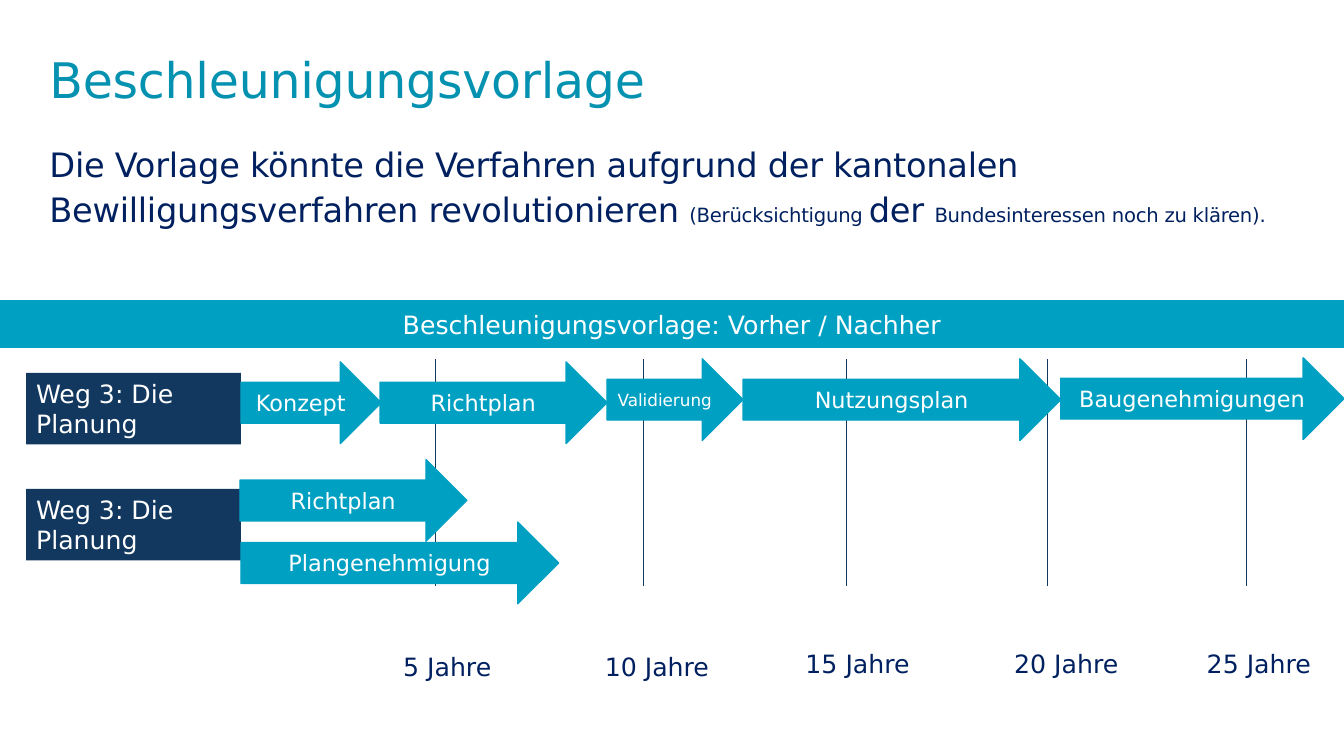
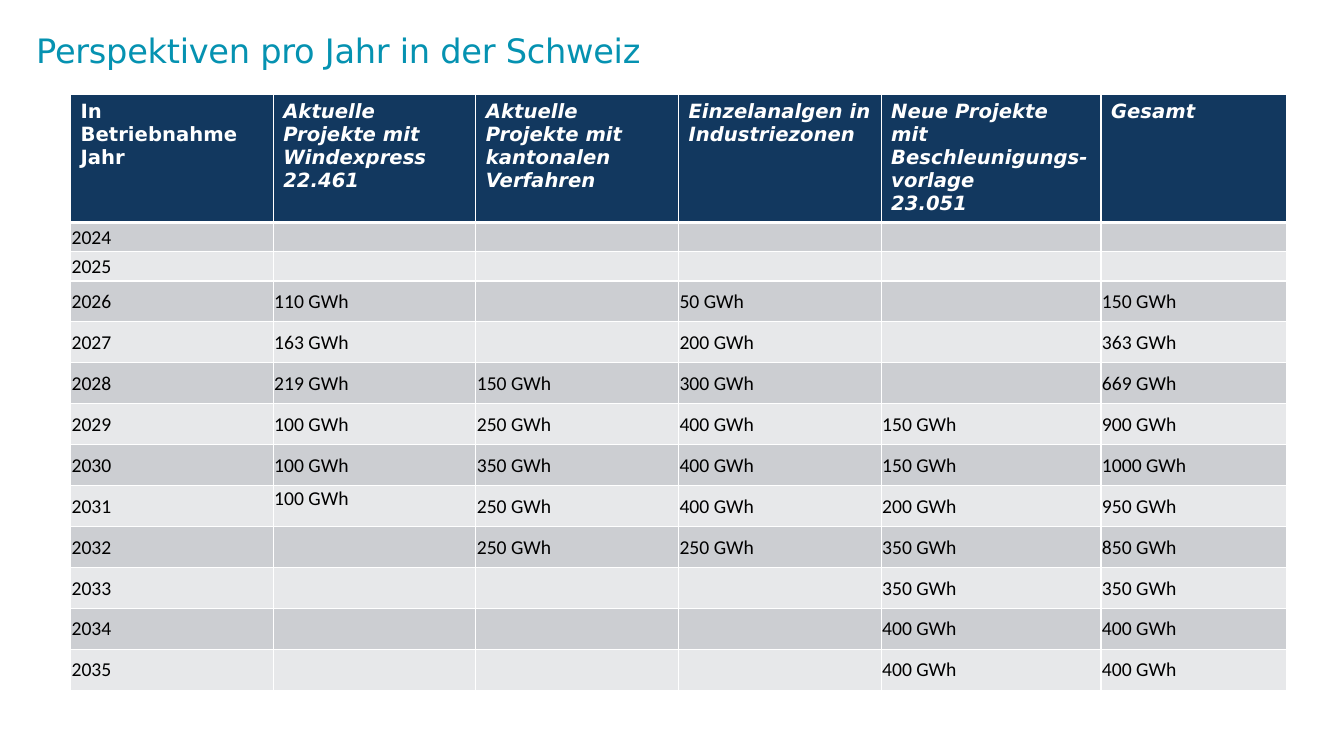
"""Build two slides on faster permits: a timeline and a yearly outlook table."""
from lxml import etree
from pptx import Presentation
from pptx.dml.color import RGBColor
from pptx.enum.shapes import MSO_CONNECTOR, MSO_SHAPE
from pptx.enum.text import MSO_ANCHOR, PP_ALIGN
from pptx.oxml.ns import qn
from pptx.util import Inches, Pt

RECT, ARROW = MSO_SHAPE.RECTANGLE, MSO_SHAPE.RIGHT_ARROW
LINE = MSO_CONNECTOR.STRAIGHT
TOP, MIDDLE = MSO_ANCHOR.TOP, MSO_ANCHOR.MIDDLE
LEFT, CENTER = PP_ALIGN.LEFT, PP_ALIGN.CENTER

COLORS = {"title": "0592B1", "text": "002060", "teal": "00A0C3", "navy": "12385F",
          "white": "FFFFFF", "black": "000000", "dark": "CCCED2", "light": "E7E8EA"}
SANS, BODY = "DejaVu Sans", "Calibri"

LEAD = [("Die Vorlage könnte die Verfahren aufgrund der kantonalen "
         "Bewilligungsverfahren revolutionieren ", 24),
        ("(Berücksichtigung ", 14), ("der ", 24),
        ("Bundesinteressen noch zu klären).", 14)]
BAND = "Beschleunigungsvorlage: Vorher / Nachher"
PATHS = [("Weg 3: Die Planung", 3.7), ("Weg 3: Die Planung", 4.85)]
YEARS = [("5 Jahre", 3.9, 6.41, 1.21), ("10 Jahre", 5.9, 6.41, 1.48),
         ("15 Jahre", 7.89, 6.38, 1.48), ("20 Jahre", 9.96, 6.38, 1.48),
         ("25 Jahre", 11.87, 6.38, 1.31)]
MARKS = [4.32, 6.38, 8.39, 10.39, 12.36]
STEPS = [("Konzept", 2.39, 3.59, 1.39, 16), ("Richtplan", 3.77, 3.59, 2.25, 16),
         ("Validierung", 6.02, 3.56, 1.35, 12), ("Nutzungsplan", 7.37, 3.56, 3.15, 16),
         ("Baugenehmigungen", 10.52, 3.55, 2.81, 16),
         ("Richtplan", 2.38, 4.56, 2.25, 16), ("Plangenehmigung", 2.39, 5.18, 3.15, 16)]

HEADS = ["In Betriebnahme Jahr", "Aktuelle Projekte mit Windexpress 22.461",
         "Aktuelle Projekte mit kantonalen Verfahren", "Einzelanalgen in Industriezonen",
         "Neue Projekte mit Beschleunigungs-vorlage\n23.051", "Gesamt"]
POWER = [(2024, None, None, None, None, None), (2025, None, None, None, None, None),
         (2026, 110, None, 50, None, 150), (2027, 163, None, 200, None, 363),
         (2028, 219, 150, 300, None, 669), (2029, 100, 250, 400, 150, 900),
         (2030, 100, 350, 400, 150, 1000), (2031, 100, 250, 400, 200, 950),
         (2032, None, 250, 250, 350, 850), (2033, None, None, None, 350, 350),
         (2034, None, None, None, 400, 400), (2035, None, None, None, 400, 400)]
WIDTHS = [2.01] * 4 + [2.18, 1.84]
HEIGHTS = [1.24] + [0.29] * 2 + [4.06 / 10] * 10
RAISED = (2031, 1)


def rgb(name):
    return RGBColor.from_string(COLORS[name])


def add_run(para, text, size, color, font=SANS, bold=False, slant=False, tight=False):
    run = para.add_run()
    run.text = text
    face = run.font
    face.name, face.size, face.bold, face.italic = font, Pt(size), bold, slant
    face.color.rgb = rgb(color)
    if tight:
        run._r.get_or_add_rPr().set("spc", "-20")


def add_text(slide, box, runs, color="text", flush=False, space=None):
    frame = slide.shapes.add_textbox(*map(Inches, box)).text_frame
    frame.word_wrap = True
    if flush:
        frame.margin_left = frame.margin_top = frame.margin_right = frame.margin_bottom = 0
    para = frame.paragraphs[0]
    if space:
        para.line_spacing = space
    for text, size in runs:
        add_run(para, text, size, color, tight=flush)


def add_title(slide, text, left, top, size):
    add_text(slide, (left, top, 11.66, 0.64), [(text, size)], "title", flush=True)


def add_block(slide, kind, box, text, size, color, edge=True, align=CENTER, anchor=MIDDLE):
    shape = slide.shapes.add_shape(kind, *map(Inches, box))
    shape.shadow.inherit = False
    shape.fill.solid()
    shape.fill.fore_color.rgb = rgb(color)
    if edge:
        shape.line.color.rgb = rgb(color)
        shape.line.width = Pt(1)
    else:
        shape.line.fill.background()
    frame = shape.text_frame
    frame.word_wrap = True
    frame.vertical_anchor = anchor
    frame.paragraphs[0].alignment = align
    add_run(frame.paragraphs[0], text, size, "white")


def add_mark(slide, left):
    mark = slide.shapes.add_connector(
        LINE, Inches(left), Inches(3.56), Inches(left), Inches(5.81))
    mark.line.color.rgb = rgb("navy")
    mark.line.width = Pt(0.5)
    etree.SubElement(mark._element.spPr, qn("a:effectLst"))


def style_cell(cell, color, base):
    cell.fill.solid()
    cell.fill.fore_color.rgb = rgb(color)
    props = cell._tc.get_or_add_tcPr()
    for spot, side in enumerate("LRTB"):
        width = base if side == "B" else 1
        edge = etree.Element(qn("a:ln" + side), w=str(Pt(width)))
        fill = etree.SubElement(edge, qn("a:solidFill"))
        etree.SubElement(fill, qn("a:srgbClr"), val=COLORS["white"])
        props.insert(spot, edge)


def fill_head(cell, text, slant):
    style_cell(cell, "navy", 3)
    frame = cell.text_frame
    for spot, part in enumerate(text.split("\n")):
        para = frame.add_paragraph() if spot else frame.paragraphs[0]
        add_run(para, part, 14, "white", bold=True, slant=slant)


def fill_cell(cell, text, color, anchor):
    style_cell(cell, color, 1)
    cell.margin_left = cell.margin_top = cell.margin_right = Inches(0.01)
    cell.margin_bottom = 0
    cell.vertical_anchor = anchor
    para = cell.text_frame.paragraphs[0]
    if text:
        add_run(para, text, 14, "black", BODY)
    else:
        etree.SubElement(para._p, qn("a:endParaRPr"), sz="1400")


def build_plan(slide):
    add_title(slide, "Beschleunigungsvorlage", 0.49, 0.49, 35)
    add_text(slide, (0.49, 1.38, 12.85, 1.43), LEAD, flush=True, space=1.12)
    for text, left, top, width in YEARS:
        add_text(slide, (left, top, width, 0.4), [(text, 18)])
    for text, top in PATHS:
        add_block(slide, RECT, (0.26, top, 2.13, 0.71), text, 18, "navy",
                  edge=False, align=LEFT, anchor=TOP)
    add_block(slide, RECT, (0, 2.98, 13.33, 0.47), BAND, 18, "teal")
    for left in MARKS:
        add_mark(slide, left)
    for text, left, top, width, size in STEPS:
        add_block(slide, ARROW, (left, top, width, 0.81), text, size, "teal")


def build_outlook(slide):
    add_title(slide, "Perspektiven pro Jahr in der Schweiz", 0.36, 0.3, 24)
    box = (0.7, 0.94, sum(WIDTHS), sum(HEIGHTS))
    table = slide.shapes.add_table(len(HEIGHTS), len(WIDTHS), *map(Inches, box)).table
    table.horz_banding = False
    for col, width in zip(table.columns, WIDTHS):
        col.width = Inches(width)
    for row, height in zip(table.rows, HEIGHTS):
        row.height = Inches(height)
    for col, text in enumerate(HEADS):
        fill_head(table.cell(0, col), text, col > 0)
    for row, (year, *loads) in enumerate(POWER, 1):
        texts = [str(year)] + [f"{load} GWh" if load else "" for load in loads]
        for col, text in enumerate(texts):
            fill_cell(table.cell(row, col), text, "dark" if row % 2 else "light",
                      TOP if (year, col) == RAISED else MIDDLE)


def main():
    deck = Presentation()
    deck.slide_width, deck.slide_height = Inches(13.33), Inches(7.5)
    for build in (build_plan, build_outlook):
        build(deck.slides.add_slide(deck.slide_layouts[6]))
    deck.save("out.pptx")


if __name__ == "__main__":
    main()
